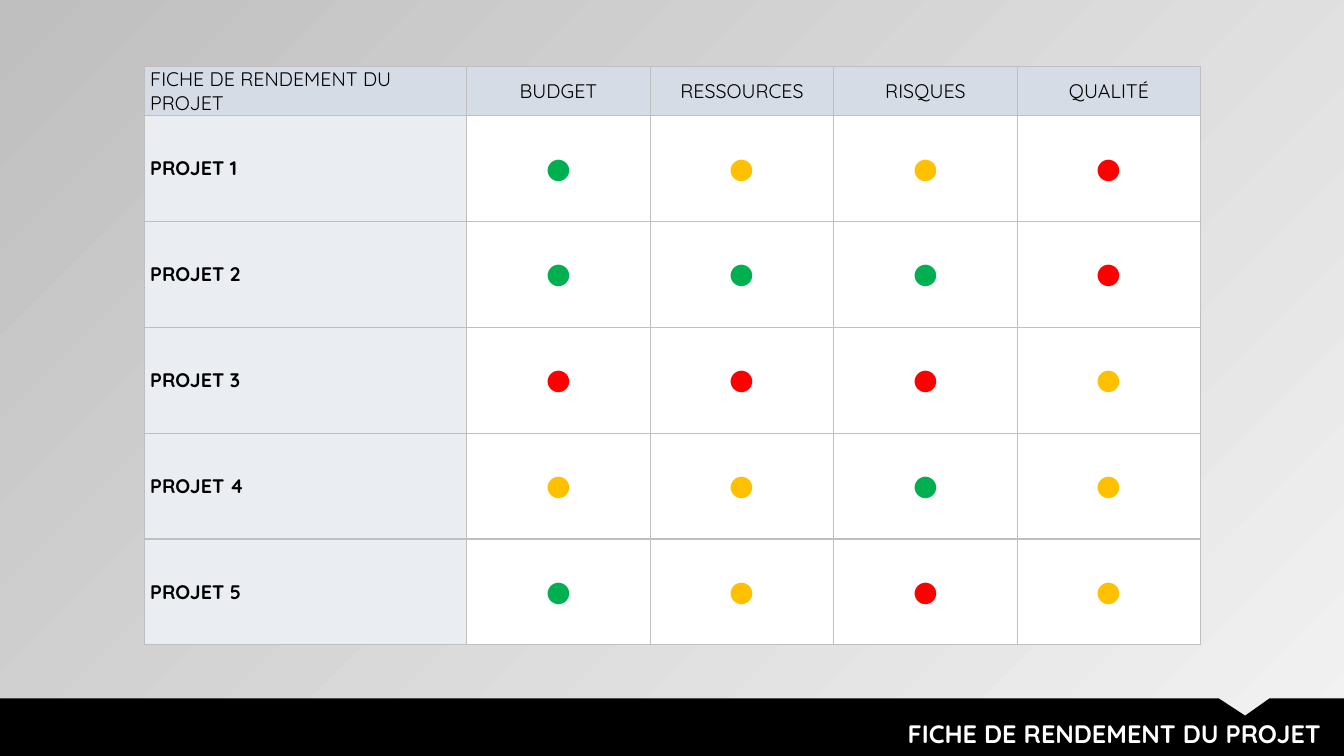
from dataclasses import dataclass

from lxml.etree import SubElement
from pptx import Presentation
from pptx.dml.color import RGBColor as Color
from pptx.enum.text import MSO_ANCHOR as Anchor, MSO_AUTO_SIZE as AutoSize, PP_ALIGN as Align
from pptx.oxml.ns import qn
from pptx.util import Inches, Pt


@dataclass(frozen=True)
class Theme:
    font: str = "Quicksand"
    black: str = "000000"
    white: str = "FFFFFF"
    light: str = "F2F2F2"
    grey: str = "BFBFBF"
    header: str = "D6DCE5"
    label: str = "EAEEF3"
    green: str = "00B050"
    amber: str = "FFC000"
    red: str = "FF0000"
    title_size: int = 18
    text_size: int = 14
    dot_size: int = 60


def format_text(paragraph, size, color, bold, align):
    paragraph.alignment = align
    for run in paragraph.runs:
        run.font.name = theme.font
        run.font.size = Pt(size)
        run.font.bold = bold
        run.font.color.rgb = Color.from_string(color)


def style_cell(cell, fill):
    cell.vertical_anchor = Anchor.MIDDLE
    cell.margin_left = cell.margin_right = Inches(0.06)
    cell.margin_top = cell.margin_bottom = 0
    properties = cell._tc.get_or_add_tcPr()
    for side in ("a:lnL", "a:lnR", "a:lnT", "a:lnB"):
        border = SubElement(properties, qn(side), w=str(Pt(1)))
        SubElement(SubElement(border, qn("a:solidFill")), qn("a:srgbClr"), val=theme.grey)
    cell.fill.solid()
    cell.fill.fore_color.rgb = Color.from_string(fill)


theme = Theme()
width, height = 13.33, 7.5
presentation = Presentation()
presentation.slide_width = Inches(width)
presentation.slide_height = Inches(height)
slide = presentation.slides.add_slide(presentation.slide_layouts[5])

background = slide.background.fill
background.gradient()
background.gradient_angle = 135
for stop, color, position in zip(background.gradient_stops, (theme.light, theme.grey), (0, 1)):
    stop.color.rgb = Color.from_string(color)
    stop.position = position
light_stop = next(slide.element.iter(qn("a:srgbClr")))
SubElement(light_stop, qn("a:alpha"), val="40000")

band_top = 6.93
band_points = [
    (0, band_top), (12.09, band_top), (12.35, 7.1), (12.59, band_top),
    (width, band_top), (width, height), (0, height),
]
start, *corners = [(Inches(x), Inches(y)) for x, y in band_points]
outline = slide.shapes.build_freeform(*start)
outline.add_line_segments(corners)
band = outline.convert_to_shape()
band.shadow.inherit = False
band.fill.solid()
band.fill.fore_color.rgb = Color.from_string(theme.black)
band.line.fill.background()

headings = ["FICHE DE RENDEMENT DU PROJET", "BUDGET", "RESSOURCES", "RISQUES", "QUALITÉ"]
status_colors = {"V": theme.green, "J": theme.amber, "R": theme.red}
project_statuses = ["VJJR", "VVVR", "RRRJ", "JJVJ", "VJRJ"]
column_widths = [3.2] + [1.82] * 4
row_heights = [0.4] + [1.05] * len(project_statuses)

table = slide.shapes.add_table(
    len(row_heights), len(column_widths), Inches(1.43), Inches(0.66),
    Inches(sum(column_widths)), Inches(sum(row_heights)),
).table
table.first_row = False
table.horz_banding = False
for column, column_width in zip(table.columns, column_widths):
    column.width = Inches(column_width)
for row, row_height in zip(table.rows, row_heights):
    row.height = Inches(row_height)

for index, heading in enumerate(headings):
    cell = table.cell(0, index)
    style_cell(cell, theme.header)
    cell.text_frame.text = heading
    align = Align.CENTER if index else Align.LEFT
    format_text(cell.text_frame.paragraphs[0], theme.text_size, theme.black, False, align)

for number, statuses in enumerate(project_statuses, start=1):
    label = table.cell(number, 0)
    style_cell(label, theme.label)
    label.text_frame.text = f"PROJET {number}"
    format_text(label.text_frame.paragraphs[0], theme.text_size, theme.black, True, Align.LEFT)
    for index, status in enumerate(statuses, start=1):
        cell = table.cell(number, index)
        style_cell(cell, theme.white)
        cell.text_frame.text = "•"
        format_text(cell.text_frame.paragraphs[0], theme.dot_size,
                    status_colors[status], False, Align.CENTER)

title = slide.shapes.title
title.left, title.top = Inches(4.14), Inches(7.08)
title.width, title.height = Inches(9.06), Inches(0.4)
title.text_frame.text = headings[0]
title.text_frame.word_wrap = True
title.text_frame.auto_size = AutoSize.SHAPE_TO_FIT_TEXT
title.text_frame.vertical_anchor = Anchor.TOP
format_text(title.text_frame.paragraphs[0], theme.title_size, theme.white, True, Align.RIGHT)
slide.shapes.element.append(title.element)

presentation.save("out.pptx")
